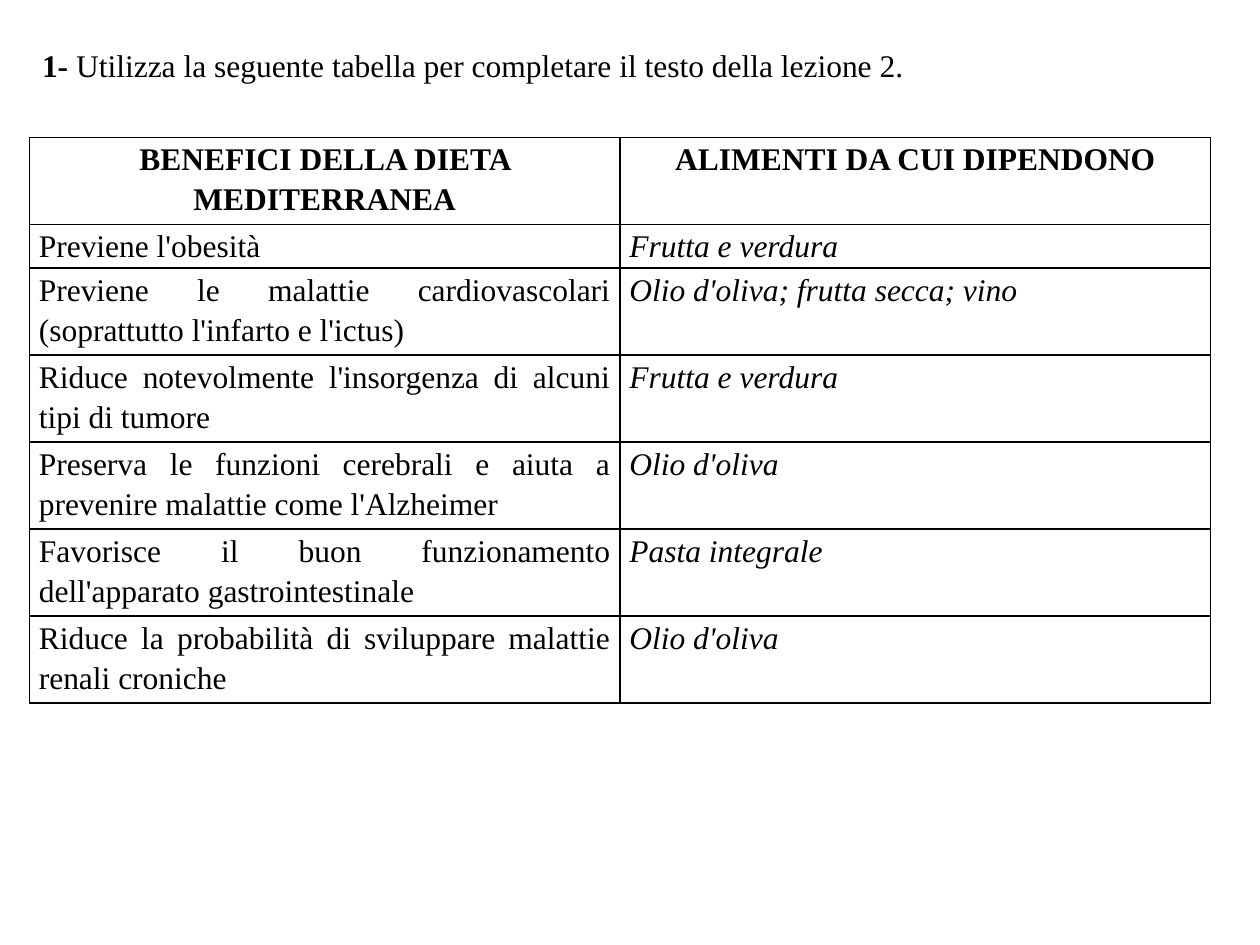
from lxml import etree
from pptx import Presentation
from pptx.dml.color import RGBColor
from pptx.enum.text import MSO_ANCHOR, MSO_AUTO_SIZE, PP_ALIGN
from pptx.oxml.ns import qn
from pptx.util import Pt

BLACK = RGBColor(0x00, 0x00, 0x00)
WHITE = RGBColor(0xFF, 0xFF, 0xFF)
LEFT, CENTER, JUSTIFY = PP_ALIGN.LEFT, PP_ALIGN.CENTER, PP_ALIGN.JUSTIFY
MIDDLE = MSO_ANCHOR.MIDDLE
FIT_SHAPE = MSO_AUTO_SIZE.SHAPE_TO_FIT_TEXT
FONT_NAME = "Times New Roman"
FONT_SIZE = 18
TITLE_ONLY = 5
LINE_HEIGHT = 24.85

INSTRUCTION = [
    ("1- ", True),
    ("Utilizza la seguente tabella per completare il testo della lezione 2.", False),
]
HEADERS = ("BENEFICI DELLA DIETA MEDITERRANEA", "ALIMENTI DA CUI DIPENDONO")
BENEFITS = [
    ("Previene l'obesità", "Frutta e verdura"),
    ("Previene le malattie cardiovascolari (soprattutto l'infarto e l'ictus)",
     "Olio d'oliva; frutta secca; vino"),
    ("Riduce notevolmente l'insorgenza di alcuni tipi di tumore", "Frutta e verdura"),
    ("Preserva le funzioni cerebrali e aiuta a prevenire malattie come l'Alzheimer",
     "Olio d'oliva"),
    ("Favorisce il buon funzionamento dell'apparato gastrointestinale",
     "Pasta integrale"),
    ("Riduce la probabilità di sviluppare malattie renali croniche", "Olio d'oliva"),
]
LINES_PER_ROW = [2, 1, 2, 2, 2, 2, 2]


def set_attributes(target, values):
    """Set each named attribute of the target."""
    for name, value in values.items():
        setattr(target, name, value)


def add_run(paragraph, text, bold=False, italic=False):
    """Append a run in the slide's common font."""
    run = paragraph.add_run()
    run.text = text
    set_attributes(run.font, {"name": FONT_NAME, "size": Pt(FONT_SIZE),
                              "bold": bold, "italic": italic})
    run.font.color.rgb = BLACK


def add_borders(cell, width):
    """Draw a solid black line on all four sides of a cell."""
    properties = cell._tc.get_or_add_tcPr()
    for index, side in enumerate(("a:lnL", "a:lnR", "a:lnT", "a:lnB")):
        line = etree.Element(qn(side), w=str(Pt(width)))
        fill = etree.SubElement(line, qn("a:solidFill"))
        etree.SubElement(fill, qn("a:srgbClr"), val=str(BLACK))
        properties.insert(index, line)


def place_instruction(slide, left, top, width, height):
    """Place the exercise instruction in the title placeholder."""
    title = slide.shapes.title
    set_attributes(title, {"left": Pt(left), "top": Pt(top),
                           "width": Pt(width), "height": Pt(height)})
    set_attributes(title.text_frame, {"word_wrap": False, "vertical_anchor": MIDDLE,
                                      "auto_size": FIT_SHAPE})
    paragraph = title.text_frame.paragraphs[0]
    paragraph.alignment = LEFT
    for text, bold in INSTRUCTION:
        add_run(paragraph, text, bold=bold)


def fill_cell(cell, text, is_header, is_food):
    """Write and format one table cell."""
    set_attributes(cell, {"margin_left": Pt(5.4), "margin_right": Pt(5.4),
                          "margin_top": 0, "margin_bottom": 0})
    cell.fill.solid()
    cell.fill.fore_color.rgb = WHITE
    add_borders(cell, 1)
    paragraph = cell.text_frame.paragraphs[0]
    set_attributes(paragraph, {"alignment": CENTER if is_header else JUSTIFY,
                               "line_spacing": 1.15})
    add_run(paragraph, text, bold=is_header, italic=is_food and not is_header)


def place_benefits_table(slide, left, top, width):
    """Place the table of diet benefits and the foods behind them."""
    rows = [HEADERS, *BENEFITS]
    height = LINE_HEIGHT * sum(LINES_PER_ROW)
    table = slide.shapes.add_table(len(rows), len(HEADERS), Pt(left), Pt(top),
                                   Pt(width), Pt(height)).table
    set_attributes(table, {"first_row": False, "horz_banding": False})
    for column in table.columns:
        column.width = Pt(width / len(HEADERS))
    for row_index, (texts, lines) in enumerate(zip(rows, LINES_PER_ROW)):
        table.rows[row_index].height = Pt(LINE_HEIGHT * lines)
        for column_index, text in enumerate(texts):
            fill_cell(table.cell(row_index, column_index), text,
                      row_index == 0, column_index == 1)


def main():
    """Build and save the presentation."""
    presentation = Presentation()
    set_attributes(presentation, {"slide_width": Pt(720), "slide_height": Pt(540)})
    slide = presentation.slides.add_slide(presentation.slide_layouts[TITLE_ONLY])
    place_instruction(slide, 16.8, 22.6, 512.6, 29)
    place_benefits_table(slide, 16.8, 78.6, 675)
    presentation.save("out.pptx")


if __name__ == "__main__":
    main()
